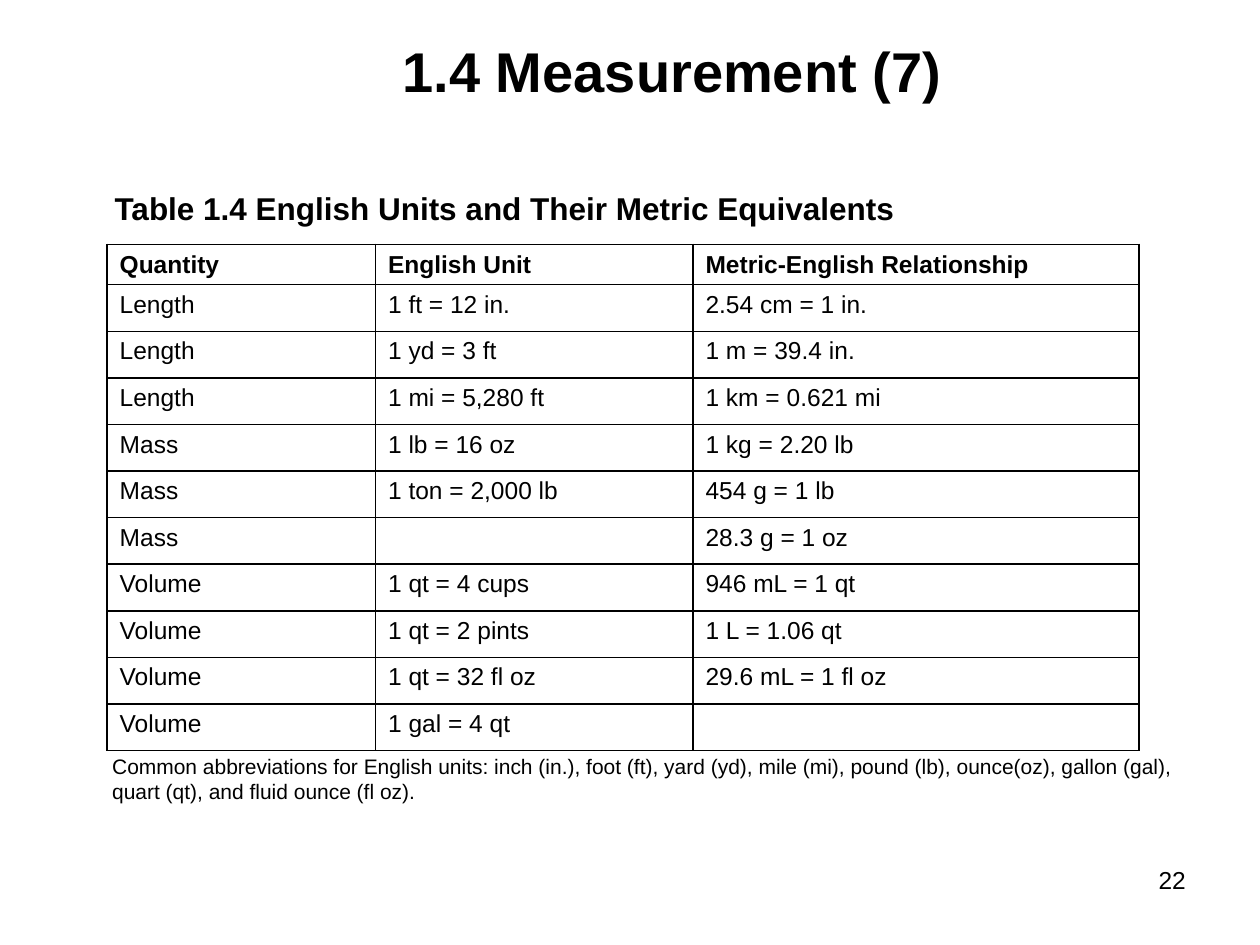
from dataclasses import dataclass

from lxml import etree
from pptx import Presentation
from pptx.dml.color import RGBColor
from pptx.enum.text import MSO_ANCHOR, MSO_AUTO_SIZE, PP_ALIGN
from pptx.oxml.ns import qn
from pptx.util import Inches, Pt

LEFT, CENTER, RIGHT = PP_ALIGN.LEFT, PP_ALIGN.CENTER, PP_ALIGN.RIGHT
TOP, MIDDLE = MSO_ANCHOR.TOP, MSO_ANCHOR.MIDDLE
NO_AUTOFIT = MSO_AUTO_SIZE.NONE

COLORS = {"text": "000000", "border": "000000"}
FONT = "Arial"
TABLE_SIZE = 14
HEADER_HEIGHT, ROW_HEIGHT = 0.32, 0.37
COLUMN_WIDTHS = (2.13, 2.52, 3.54)


@dataclass(frozen=True)
class Box:
    left: float
    top: float
    width: float
    height: float

    def lengths(self):
        return tuple(Inches(v) for v in (self.left, self.top, self.width, self.height))


@dataclass(frozen=True)
class UnitRow:
    quantity: str
    english: str
    metric: str

    def texts(self):
        return self.quantity, self.english, self.metric


HEADER = UnitRow("Quantity", "English Unit", "Metric-English Relationship")
UNITS = [
    UnitRow("Length", "1 ft = 12 in.", "2.54 cm = 1 in."),
    UnitRow("Length", "1 yd = 3 ft", "1 m = 39.4 in."),
    UnitRow("Length", "1 mi = 5,280 ft", "1 km = 0.621 mi"),
    UnitRow("Mass", "1 lb = 16 oz", "1 kg = 2.20 lb"),
    UnitRow("Mass", "1 ton = 2,000 lb", "454 g = 1 lb"),
    UnitRow("Mass", "", "28.3 g = 1 oz"),
    UnitRow("Volume", "1 qt = 4 cups", "946 mL = 1 qt"),
    UnitRow("Volume", "1 qt = 2 pints", "1 L = 1.06 qt"),
    UnitRow("Volume", "1 qt = 32 fl oz", "29.6 mL = 1 fl oz"),
    UnitRow("Volume", "1 gal = 4 qt", ""),
]
NOTE = (
    "Common abbreviations for English units: inch (in.), foot (ft), yard (yd), "
    "mile (mi), pound (lb), ounce(oz), gallon (gal), quart (qt), "
    "and fluid ounce (fl oz)."
)


def write(tf, text: str, *, size: float, bold: bool = False, align=LEFT) -> None:
    p = tf.paragraphs[0]
    p.alignment = align
    if not text:
        p._p.get_or_add_endParaRPr().set("sz", str(size * 100))
        return
    r = p.add_run()
    r.text = text
    r.font.name, r.font.size, r.font.bold = FONT, Pt(size), bold
    r.font.color.rgb = RGBColor.from_string(COLORS["text"])


def place_text(sp, box: Box, text: str, *, anchor=TOP, **fmt) -> None:
    sp.left, sp.top, sp.width, sp.height = box.lengths()
    tf = sp.text_frame
    tf.word_wrap = True
    tf.auto_size = NO_AUTOFIT
    tf.vertical_anchor = anchor
    write(tf, text, **fmt)
    p = tf.paragraphs[0]
    p.space_before = Pt(0)
    pPr = p._p.get_or_add_pPr()
    pPr.set("marL", "0")
    pPr.set("indent", "0")
    etree.SubElement(pPr, qn("a:buNone"))


def add_borders(cell, width: float = 1) -> None:
    tcPr = cell._tc.get_or_add_tcPr()
    for i, side in enumerate(("a:lnL", "a:lnR", "a:lnT", "a:lnB")):
        ln = etree.Element(qn(side), w=str(Pt(width)))
        fill = etree.SubElement(ln, qn("a:solidFill"))
        etree.SubElement(fill, qn("a:srgbClr"), val=COLORS["border"])
        tcPr.insert(i, ln)


def add_unit_table(s, left: float, top: float) -> None:
    rows = [HEADER, *UNITS]
    height = HEADER_HEIGHT + ROW_HEIGHT * len(UNITS)
    box = Box(left, top, sum(COLUMN_WIDTHS), height)
    table = s.shapes.add_table(len(rows), len(COLUMN_WIDTHS), *box.lengths()).table
    table.horz_banding = False
    for column, width in zip(table.columns, COLUMN_WIDTHS):
        column.width = Inches(width)
    for i, row in enumerate(rows):
        table.rows[i].height = Inches(ROW_HEIGHT if i else HEADER_HEIGHT)
        for j, text in enumerate(row.texts()):
            cell = table.cell(i, j)
            cell.fill.background()
            add_borders(cell)
            write(cell.text_frame, text, size=TABLE_SIZE, bold=i == 0)


def main() -> None:
    prs = Presentation()
    prs.slide_width, prs.slide_height = Inches(10), Inches(7.5)
    s = prs.slides.add_slide(prs.slide_layouts.get_by_name("Two Content"))
    title, caption, note = list(s.placeholders)[:3]

    place_text(title, Box(3.09, 0.21, 4.49, 0.69), "1.4 Measurement (7)",
               size=32, bold=True, align=CENTER, anchor=MIDDLE)
    place_text(caption, Box(0.81, 1.45, 6.77, 0.49),
               "Table 1.4 English Units and Their Metric Equivalents",
               size=18, bold=True)
    add_unit_table(s, 0.85, 1.94)
    place_text(note, Box(0.79, 5.93, 8.67, 0.55), NOTE, size=12)

    number = Box(8.47, 6.82, 1.04, 0.34)
    place_text(s.shapes.add_textbox(*number.lengths()), number, "22",
               size=14, align=RIGHT)
    prs.save("out.pptx")


if __name__ == "__main__":
    main()
